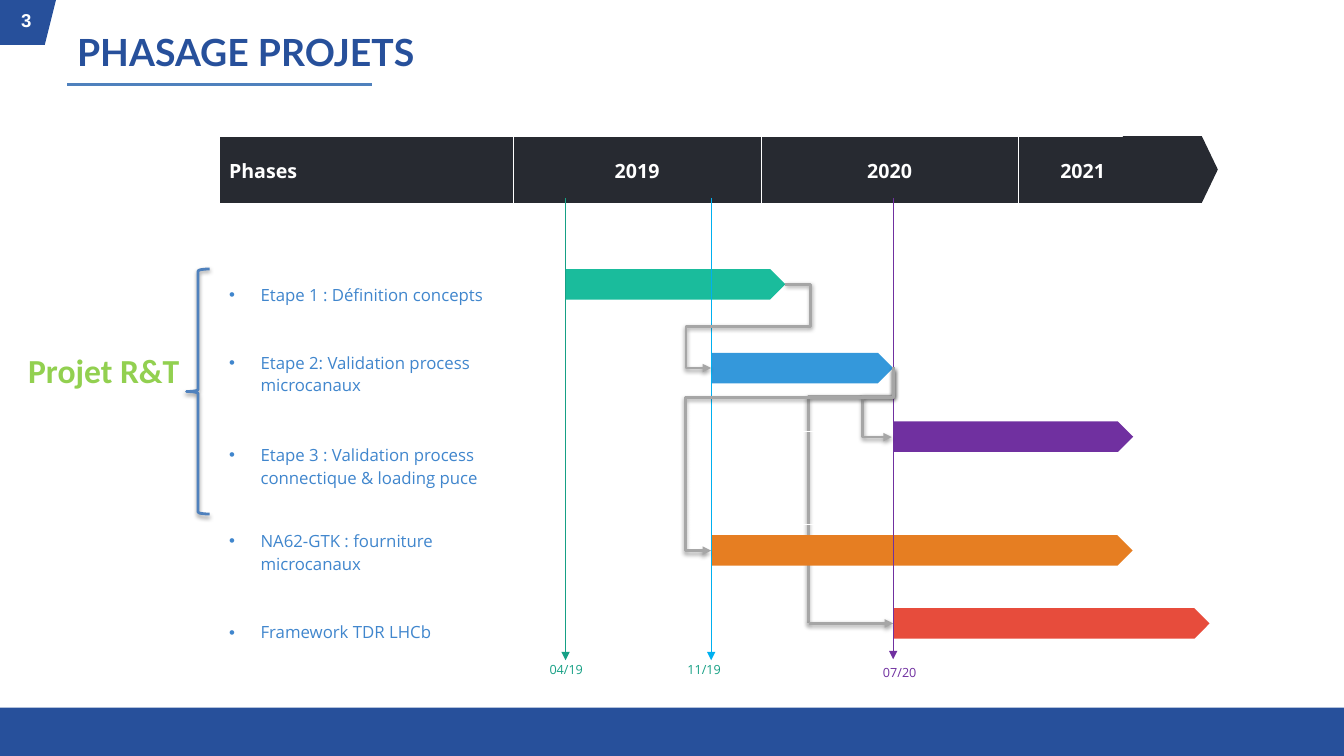
from dataclasses import dataclass

import pptx
import pptx.dml.color
import pptx.enum.shapes
import pptx.enum.text
import pptx.oxml
import pptx.oxml.ns
import pptx.util

Pt = pptx.util.Pt
SHAPE = pptx.enum.shapes.MSO_SHAPE
LINE = pptx.enum.shapes.MSO_CONNECTOR
ANCHOR = pptx.enum.text.MSO_ANCHOR
ALIGN = pptx.enum.text.PP_ALIGN
NS = pptx.oxml.ns.nsdecls("a")


@dataclass(frozen=True)
class Theme:
    navy: str = "27509B"
    blue: str = "4F81BD"
    step_text: str = "4086CD"
    header: str = "272A31"
    white: str = "FFFFFF"
    grey: str = "A6A6A6"
    lime: str = "92D050"
    teal: str = "16A085"
    cyan: str = "00B0F0"
    purple: str = "7030A0"
    title_size: float = 26.7
    project_size: float = 24
    header_size: float = 14
    number_size: float = 13.3
    step_size: float = 12
    date_size: float = 9
    body_font: str = "Open Sans"


T = Theme()
APRIL_2019, NOVEMBER_2019, JULY_2020 = 404, 508, 638
BAR_HEIGHT = 21.8
COLUMNS = [210.2, 177.1, 183.6, 92.2]
ROWS = [49, 95.8, 66.2, 66.2, 81.4]
HEADINGS = ["Phases", "2019", "2020", "2021"]
# Steps of each row, with the top and bottom margins of the cell
STEPS = [
    (["Etape 1 : Définition concepts"], 36.3, 3.6),
    (["Etape 2: Validation process microcanaux"], 3.6, 20),
    (["Etape 3 : Validation process connectique & loading puce"], 3.6, 20),
    (["NA62-GTK : fourniture microcanaux", "Framework TDR LHCb"], 3.6, 3.6),
]
BARS = [
    (APRIL_2019, 192.2, 157, "1ABC9C"),
    (NOVEMBER_2019, 382.3, 301, "E67E22"),
    (NOVEMBER_2019, 252, 130, "3498DB"),
    (JULY_2020, 301, 171.4, T.purple),
    (JULY_2020, 434.4, 226, "E74C3C"),
]
MILESTONES = [
    (APRIL_2019, 471.6, T.teal, "04/19", 392.5, 469.5, T.teal),
    (NOVEMBER_2019, 471.6, T.cyan, "11/19", 491, 469.5, T.teal),
    (JULY_2020, 470.9, T.purple, "07/20", 630.7, 471.3, T.purple),
]


def rgb(color):
    return pptx.dml.color.RGBColor.from_string(color)


def style(p, size, color, font, bold=False):
    for r in p.runs:
        r.font.size, r.font.name, r.font.bold = Pt(size), font, bold
        r.font.color.rgb = rgb(color)


def label(s, box, text, size, color, font, bold=False, align=ALIGN.LEFT,
          wrap=True, anchor=ANCHOR.TOP, inset=7.2):
    tf = s.shapes.add_textbox(*map(Pt, box)).text_frame
    tf.word_wrap, tf.vertical_anchor, tf.margin_left = wrap, anchor, Pt(inset)
    p = tf.paragraphs[0]
    p.text, p.alignment = text, align
    style(p, size, color, font, bold)


def paint(sp, color):
    sp.shadow.inherit = False
    sp.fill.solid()
    sp.fill.fore_color.rgb = rgb(color)
    sp.line.fill.background()


def block(s, kind, box, color):
    sp = s.shapes.add_shape(kind, *map(Pt, box))
    paint(sp, color)
    return sp


def add_effects(sp, shadow):
    """Give the shape a soft shadow below it, or rule out any shadow."""
    inner = ('<a:outerShdw blurRad="40000" dist="20000" dir="5400000" rotWithShape="0">'
             '<a:srgbClr val="000000"><a:alpha val="38000"/></a:srgbClr></a:outerShdw>')
    sp._element.spPr.append(pptx.oxml.parse_xml(
        f"<a:effectLst {NS}>{inner if shadow else ''}</a:effectLst>"))


def connect(s, begin, end, color, width, arrow=False, shadow=False, kind=LINE.STRAIGHT):
    cx = s.shapes.add_connector(kind, *map(Pt, (*begin, *end)))
    cx.line.color.rgb, cx.line.width = rgb(color), Pt(width)
    if arrow:
        cx.line._get_or_add_ln().append(
            pptx.oxml.parse_xml(f'<a:tailEnd {NS} type="triangle"/>'))
    add_effects(cx, shadow)
    return cx


def elbow(s, begin, end, bends, turned=False, arrow=True):
    """Draw a bent link; a turned one leaves its start vertically."""
    if turned:
        mx, my = (begin[0] + end[0]) / 2, (begin[1] + end[1]) / 2
        begin, end = [(mx + y - my, my - x + mx) for x, y in (begin, end)]
    cx = connect(s, begin, end, T.grey, 2, arrow, True, LINE.ELBOW)
    spPr = cx._element.spPr
    if turned:
        spPr.xfrm.set("rot", "5400000")
    geom = spPr.find(pptx.oxml.ns.qn("a:prstGeom"))
    geom.set("prst", f"bentConnector{len(bends) + 2}")
    guides = "".join(f'<a:gd name="adj{i}" fmla="val {round(b * 100000)}"/>'
                     for i, b in enumerate(bends, 1))
    for old in list(geom):
        geom.remove(old)
    geom.append(pptx.oxml.parse_xml(f"<a:avLst {NS}>{guides}</a:avLst>"))


def border(cell, is_header):
    for i, side in enumerate("LRTB"):
        width = Pt(3 if is_header and side == "B" else 1)
        cell._tc.get_or_add_tcPr().insert(i, pptx.oxml.parse_xml(
            f'<a:ln{side} {NS} w="{width}"><a:solidFill><a:srgbClr val="{T.white}"/>'
            f"</a:solidFill></a:ln{side}>"))


def bullet(p):
    pPr = p._p.get_or_add_pPr()
    pPr.set("marL", str(Pt(22.5)))
    pPr.set("indent", str(Pt(-22.5)))
    pPr.append(pptx.oxml.parse_xml(f'<a:buFont {NS} typeface="Arial"/>'))
    pPr.append(pptx.oxml.parse_xml(f'<a:buChar {NS} char="•"/>'))


def phase_table(s):
    table = s.shapes.add_table(len(ROWS), len(COLUMNS), Pt(156.4), Pt(97.4),
                               Pt(sum(COLUMNS)), Pt(sum(ROWS))).table
    table.horz_banding = False
    for column, width in zip(table.columns, COLUMNS):
        column.width = Pt(width)
    for i, (row, height) in enumerate(zip(table.rows, ROWS)):
        row.height = Pt(height)
        for cell in row.cells:
            cell.vertical_anchor = ANCHOR.MIDDLE
            cell.fill.background()
            border(cell, i == 0)
    for j, heading in enumerate(HEADINGS):
        cell = table.cell(0, j)
        cell.fill.solid()
        cell.fill.fore_color.rgb = rgb(T.header)
        cell.margin_left, cell.margin_right = Pt(0 if j else 7.2), Pt(0)
        p = cell.text_frame.paragraphs[0]
        p.text, p.alignment = heading, ALIGN.CENTER if j else ALIGN.LEFT
        style(p, T.header_size, T.white, T.body_font, True)
    for i, (steps, top, bottom) in enumerate(STEPS, 1):
        cell = table.cell(i, 0)
        cell.margin_top, cell.margin_bottom = Pt(top), Pt(bottom)
        tf = cell.text_frame
        tf.text = "\n".join(steps)
        for k, p in enumerate(tf.paragraphs):
            if k:
                p.space_before = Pt(32.7)
            bullet(p)
            style(p, T.step_size, T.step_text, T.body_font)


def page_frame(s):
    fb = s.shapes.build_freeform(0, 0, scale=Pt(1))
    fb.add_line_segments([(Pt(x) / Pt(1), y) for x, y in ((40, 0), (32, 32), (0, 32))])
    paint(fb.convert_to_shape(), T.navy)
    label(s, (-0.7, 2.9, 38.9, 23.8), "3", T.number_size, T.white, "Arial", True,
          ALIGN.CENTER, wrap=False)
    block(s, SHAPE.RECTANGLE, (0, 505.4, 960, 34.6), T.navy)
    connect(s, (48, 60.5), (265.7, 60.5), T.blue, 2)
    label(s, (48, 12.2, 864, 49.7), "PHASAGE PROJETS", T.title_size, T.navy, "Lato",
          True, anchor=ANCHOR.MIDDLE)


def main():
    prs = pptx.Presentation()
    prs.slide_width, prs.slide_height = Pt(960), Pt(540)
    s = prs.slides.add_slide(prs.slide_layouts[6])
    page_frame(s)
    elbow(s, (JULY_2020, 262.9), (577.6, 445.3), [0.11], turned=True, arrow=False)
    to_framework = connect(s, (577.6, 445.3), (JULY_2020, 445.3), T.grey, 2, True, True)
    phase_table(s)
    block(s, SHAPE.PENTAGON, (802, 97.2, 67.9, 47.8), T.header).adjustments[0] = 0.24
    bars = [block(s, SHAPE.PENTAGON, (left, top, width, BAR_HEIGHT), color)
            for left, top, width, color in BARS]
    to_framework.end_connect(bars[-1], 1)
    for x, bottom, color, date, left, top, date_color in MILESTONES:
        connect(s, (x, 141.4), (x, bottom), color, 0.75, arrow=True)
        label(s, (left, top, 54, 18), date, T.date_size, date_color, T.body_font, inset=0)
    elbow(s, (JULY_2020, 262.4), (JULY_2020 - 1, 312.2), [0.41, 21.82], turned=True)
    elbow(s, (561, 203.1), (NOVEMBER_2019, 262.9), [-0.34, 0.5, 1.34])
    elbow(s, (JULY_2020, 262.9), (NOVEMBER_2019, 393.3), [0, 0.16, 1.14])
    brace = s.shapes.add_shape(SHAPE.LEFT_BRACE, *map(Pt, (133.2, 192.2, 16.6, 175)))
    brace.fill.background()
    brace.line.color.rgb, brace.line.width = rgb(T.blue), Pt(2)
    add_effects(brace, True)
    label(s, (13, 246.2, 123.8, 36), "Projet R&T", T.project_size, T.lime, "Calibri",
          True, wrap=False)
    prs.save("out.pptx")


if __name__ == "__main__":
    main()
